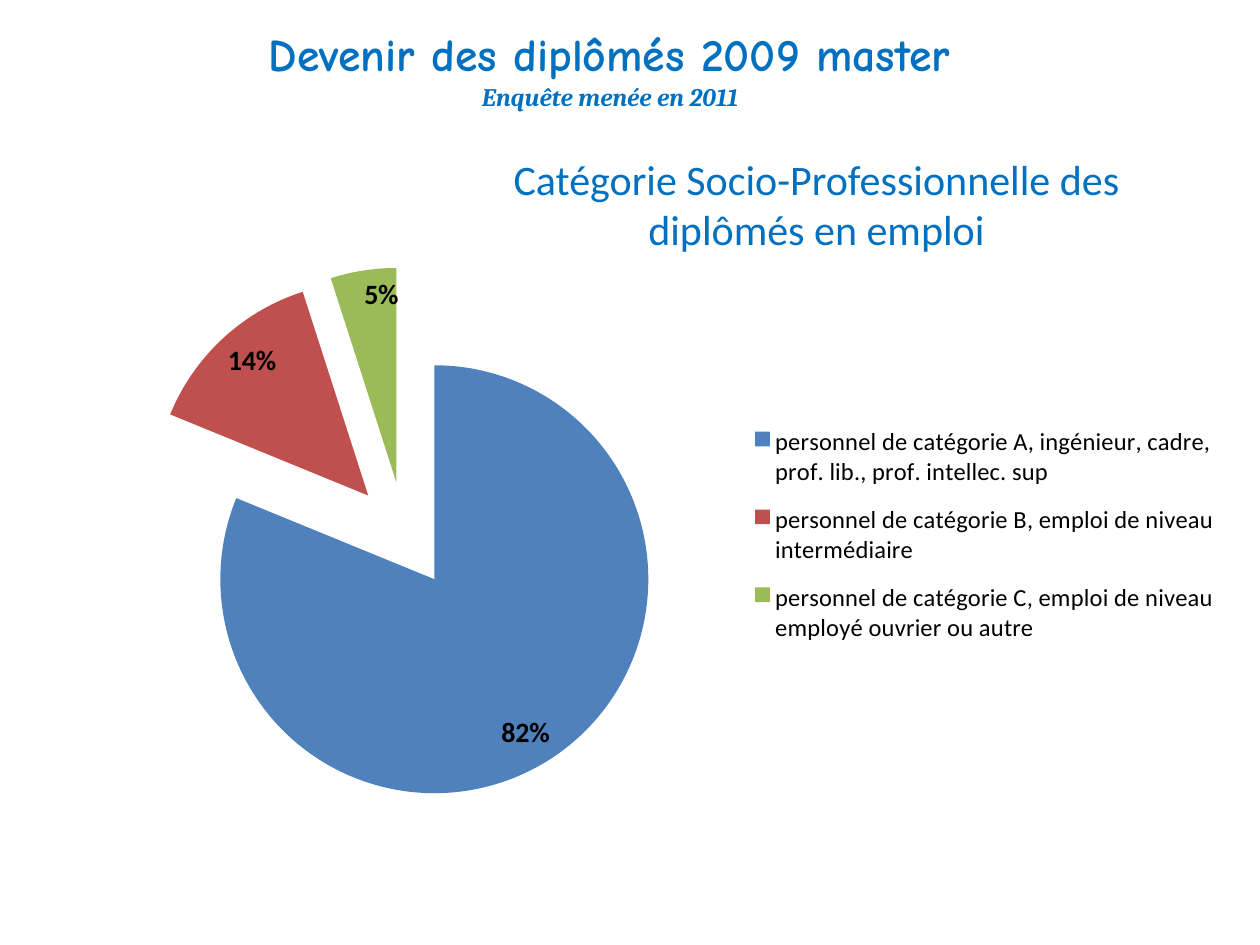
from lxml import etree
from pptx import Presentation
from pptx.chart.data import CategoryChartData
from pptx.dml.color import RGBColor
from pptx.enum.chart import XL_CHART_TYPE, XL_LABEL_POSITION, XL_LEGEND_POSITION
from pptx.enum.text import PP_ALIGN
from pptx.oxml.ns import qn
from pptx.util import Emu, Pt

PX = 914400 // 126
BLUE = RGBColor(0x00, 0x70, 0xC0)
BLACK = RGBColor(0, 0, 0)

# text, font, points, bold, italic
HEADING = [
    ("Devenir des diplômés 2009 master", "Comic Neue", 26.1, True, False),
    ("Enquête menée en 2011", "Cambria", 14.4, True, True),
]
CHART_TITLE = [
    ("Catégorie Socio-Professionnelle des diplômés en emploi", "Calibri", 24, False, False),
]
# category, percent, colour
CATEGORIES = [
    ("personnel de catégorie A, ingénieur, cadre, prof. lib., prof. intellec. sup",
     82, RGBColor(0x4F, 0x81, 0xBD)),
    ("personnel de catégorie B, emploi de niveau intermédiaire",
     14, RGBColor(0xC0, 0x50, 0x4D)),
    ("personnel de catégorie C, emploi de niveau employé ouvrier ou autre",
     5, RGBColor(0x9B, 0xBB, 0x59)),
]
EXPLOSION = 25

# left, top, width, height in px
HEADING_BOX = (44, 20, 1132, 141)
CHART_TITLE_BOX = (433, 147, 767, 115)
CHART_BOX = (20, 262, 1221, 546)
# x, y, width, height as shares of the chart
PLOT_AREA = (0, 0.01, 0.63, 0.98)
LEGEND_AREA = (0.59, 0.27, 0.4, 0.46)


def to_emu(box):
    return [Emu(length * PX) for length in box]


def add_centred_text(slide, box, lines):
    frame = slide.shapes.add_textbox(*to_emu(box)).text_frame
    frame.word_wrap = True
    for index, (text, font_name, size, bold, italic) in enumerate(lines):
        paragraph = frame.add_paragraph() if index else frame.paragraphs[0]
        paragraph.text = text
        paragraph.alignment = PP_ALIGN.CENTER
        font = paragraph.font
        font.name, font.size = font_name, Pt(size)
        font.bold, font.italic = bold, italic
        font.color.rgb = BLUE


def place(element, area, following, inner=False):
    """Give a chart part a manual layout, put before its first following sibling."""
    for old in element.findall(qn("c:layout")):
        element.remove(old)
    layout = etree.Element(qn("c:layout"))
    manual = etree.SubElement(layout, qn("c:manualLayout"))
    settings = [("layoutTarget", "inner")] if inner else []
    settings += [("xMode", "edge"), ("yMode", "edge"), *zip("xywh", area)]
    for tag, value in settings:
        etree.SubElement(manual, qn(f"c:{tag}")).set("val", str(value))
    element.find(qn(following)).addprevious(layout)


def add_pie(slide):
    data = CategoryChartData()
    data.categories = [name for name, _, _ in CATEGORIES]
    data.add_series("Series 1", [percent for _, percent, _ in CATEGORIES])
    chart = slide.shapes.add_chart(XL_CHART_TYPE.PIE, *to_emu(CHART_BOX), data).chart
    chart.has_title = False
    chart.font.name, chart.font.size = "Calibri", Pt(10)
    chart.font.color.rgb = BLACK

    chart.has_legend = True
    legend = chart.legend
    legend.position = XL_LEGEND_POSITION.RIGHT
    legend.include_in_layout = False
    legend.font.size = Pt(14)

    plot = chart.plots[0]
    plot.vary_by_categories = True
    pie = plot.series[0]
    for index, (_, _, colour) in enumerate(CATEGORIES):
        fill = pie.points[index].format.fill
        fill.solid()
        fill.fore_color.rgb = colour
    explosion = etree.Element(qn("c:explosion"))
    explosion.set("val", str(EXPLOSION))
    pie._element.find(qn("c:dPt")).addprevious(explosion)

    labels = pie.data_labels
    labels.show_value = True
    labels.number_format, labels.number_format_is_linked = '0"%"', False
    labels.position = XL_LABEL_POSITION.INSIDE_END
    labels.font.size, labels.font.bold = Pt(16), True
    labels.font.color.rgb = BLACK

    place(plot._element.getparent(), PLOT_AREA, "c:pieChart", inner=True)
    place(legend._element, LEGEND_AREA, "c:overlay")


def main():
    presentation = Presentation()
    presentation.slide_width, presentation.slide_height = to_emu((1260, 945))
    slide = presentation.slides.add_slide(presentation.slide_layouts[6])
    add_centred_text(slide, HEADING_BOX, HEADING)
    add_centred_text(slide, CHART_TITLE_BOX, CHART_TITLE)
    add_pie(slide)
    presentation.save("out.pptx")


if __name__ == "__main__":
    main()
